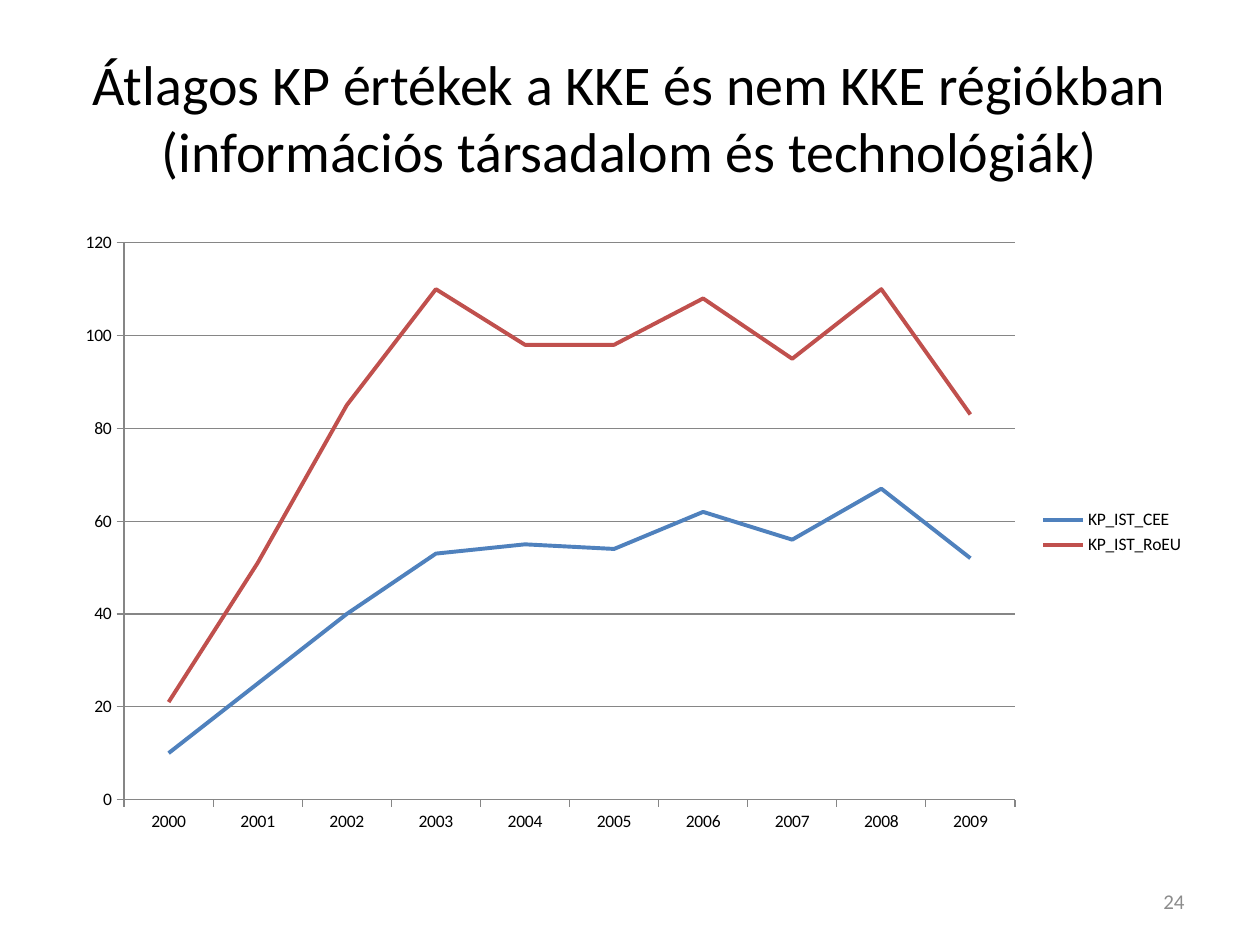
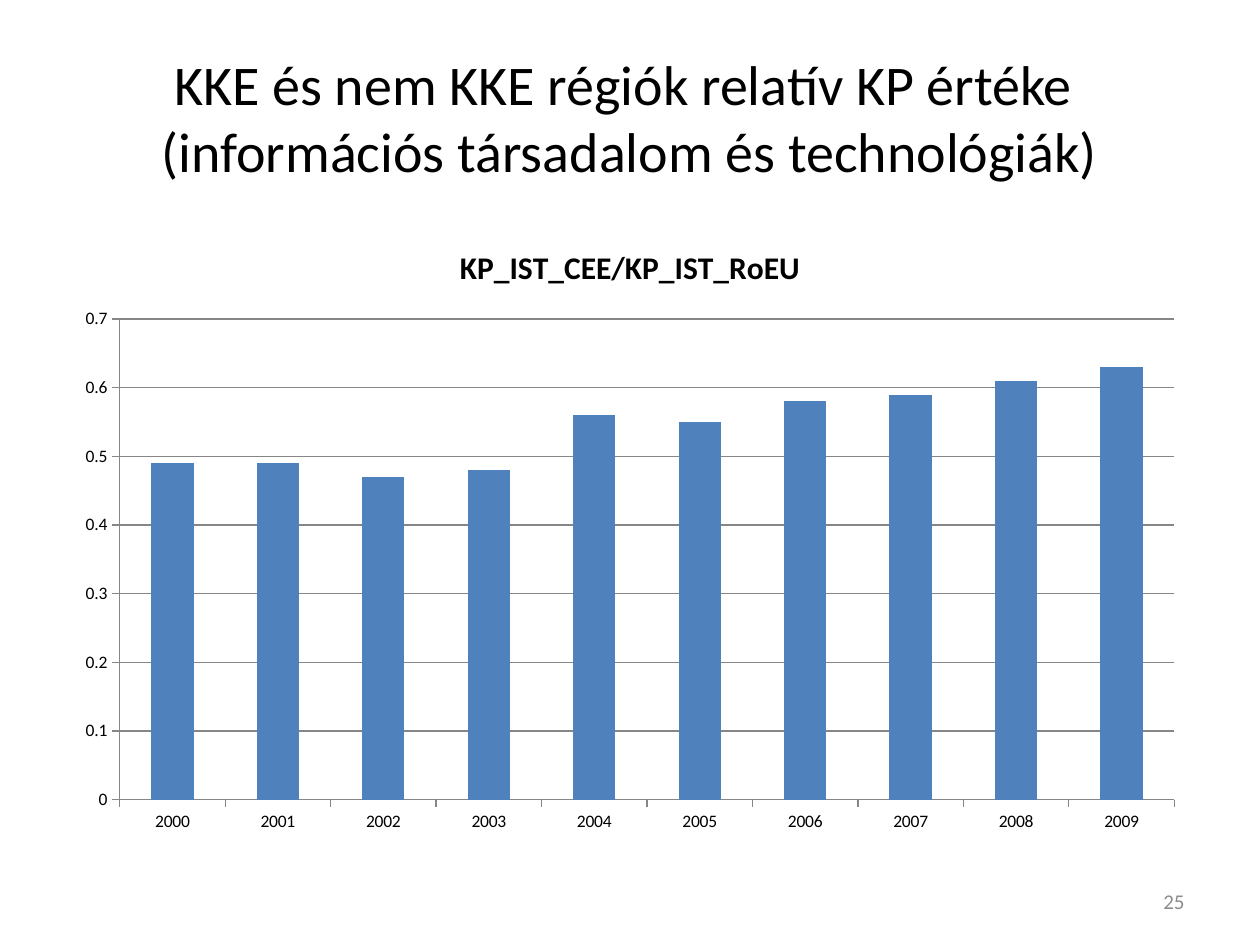
import dataclasses

import pptx
import pptx.chart.data
import pptx.dml.color
import pptx.enum.chart
import pptx.enum.text
import pptx.util

Kind = pptx.enum.chart.XL_CHART_TYPE
Align = pptx.enum.text.PP_ALIGN


@dataclasses.dataclass(frozen=True)
class Theme:
    font: str = "Calibri"
    ink: str = "000000"
    muted: str = "8C8C8C"
    rule: str = "868686"
    series: tuple = ("4F81BD", "C0504D")
    title_size: int = 32
    heading_size: int = 18
    number_size: int = 12
    label_size: int = 10
    rule_width: float = 0.75
    line_width: float = 2.25


THEME = Theme()
SLIDE_WIDTH = pptx.util.Inches(10)
SLIDE_HEIGHT = pptx.util.Inches(7.5)
COLUMNS, ROWS = 60, 150
TITLE_BOX = (3, 6, 54, 25)
CHART_BOX = (3, 35, 54, 99)
NUMBER_BOX = (43, 139, 14, 8)

YEARS = [str(year) for year in range(2000, 2010)]
SLIDES = [
    {
        "title": "Átlagos KP értékek a KKE és nem KKE régiókban (információs társadalom és technológiák)",
        "kind": Kind.LINE,
        "series": {
            "KP_IST_CEE": (10, 25, 40, 53, 55, 54, 62, 56, 67, 52),
            "KP_IST_RoEU": (21, 51, 85, 110, 98, 98, 108, 95, 110, 83),
        },
        "top": 120,
        "step": 20,
    },
    {
        "title": "KKE és nem KKE régiók relatív KP értéke \v(információs társadalom és technológiák)",
        "kind": Kind.COLUMN_CLUSTERED,
        "series": {
            "KP_IST_CEE/KP_IST_RoEU": (0.49, 0.49, 0.47, 0.48, 0.56, 0.55, 0.58, 0.59, 0.61, 0.63),
        },
        "top": 0.7,
        "step": 0.1,
    },
]


def place(box):
    left, top, width, height = box
    return (
        SLIDE_WIDTH * left // COLUMNS,
        SLIDE_HEIGHT * top // ROWS,
        SLIDE_WIDTH * width // COLUMNS,
        SLIDE_HEIGHT * height // ROWS,
    )


def apply(target, **values):
    for name, value in values.items():
        setattr(target, name, value)


def style_font(font, size, color=THEME.ink, bold=False):
    apply(font, name=THEME.font, size=pptx.util.Pt(size), bold=bold)
    font.color.rgb = pptx.dml.color.RGBColor.from_string(color)


def style_line(line, color, width):
    line.color.rgb = pptx.dml.color.RGBColor.from_string(color)
    line.width = pptx.util.Pt(width)


def add_text(page, box, text, size, color, align):
    frame = page.shapes.add_textbox(*place(box)).text_frame
    apply(frame, word_wrap=True, vertical_anchor=pptx.enum.text.MSO_ANCHOR.MIDDLE)
    para = frame.paragraphs[0]
    para.text = text
    para.alignment = align
    style_font(para.font, size, color)
    for span in para.runs:
        style_font(span.font, size, color)


def style_axes(chart, top, step):
    for axis in (chart.category_axis, chart.value_axis):
        apply(
            axis,
            major_tick_mark=pptx.enum.chart.XL_TICK_MARK.OUTSIDE,
            minor_tick_mark=pptx.enum.chart.XL_TICK_MARK.NONE,
        )
        style_line(axis.format.line, THEME.rule, THEME.rule_width)
    values = chart.value_axis
    apply(values, minimum_scale=0, maximum_scale=top, major_unit=step, has_major_gridlines=True)
    style_line(values.major_gridlines.format.line, THEME.rule, THEME.rule_width)


def add_legend(chart):
    chart.has_legend = True
    apply(
        chart.legend,
        position=pptx.enum.chart.XL_LEGEND_POSITION.RIGHT,
        include_in_layout=False,
    )


def add_heading(chart, text):
    frame = chart.chart_title.text_frame
    frame.text = text
    style_font(frame.paragraphs[0].runs[0].font, THEME.heading_size, bold=True)


def add_chart(page, box, kind, series, top, step):
    data = pptx.chart.data.CategoryChartData()
    data.categories = YEARS
    for name, values in series.items():
        data.add_series(name, values)
    chart = page.shapes.add_chart(kind, *place(box), data).chart
    style_font(chart.font, THEME.label_size)
    style_axes(chart, top, step)
    plot = chart.plots[0]
    plot.vary_by_categories = False
    is_line = kind == Kind.LINE
    apply(chart, has_title=not is_line, has_legend=False)
    if is_line:
        add_legend(chart)
    else:
        add_heading(chart, next(iter(series)))
        plot.gap_width = 150
    for item, color in zip(plot.series, THEME.series):
        if is_line:
            item.smooth = False
            item.marker.style = pptx.enum.chart.XL_MARKER_STYLE.NONE
            style_line(item.format.line, color, THEME.line_width)
        else:
            item.format.fill.solid()
            item.format.fill.fore_color.rgb = pptx.dml.color.RGBColor.from_string(color)


def add_chart_slide(deck, number, title, **chart):
    page = deck.slides.add_slide(deck.slide_layouts[6])
    add_text(page, TITLE_BOX, title, THEME.title_size, THEME.ink, Align.CENTER)
    add_chart(page, CHART_BOX, **chart)
    add_text(page, NUMBER_BOX, str(number), THEME.number_size, THEME.muted, Align.RIGHT)


def main():
    deck = pptx.Presentation()
    apply(deck, slide_width=SLIDE_WIDTH, slide_height=SLIDE_HEIGHT)
    for number, content in enumerate(SLIDES, start=24):
        add_chart_slide(deck, number, **content)
    deck.save("out.pptx")


if __name__ == "__main__":
    main()
